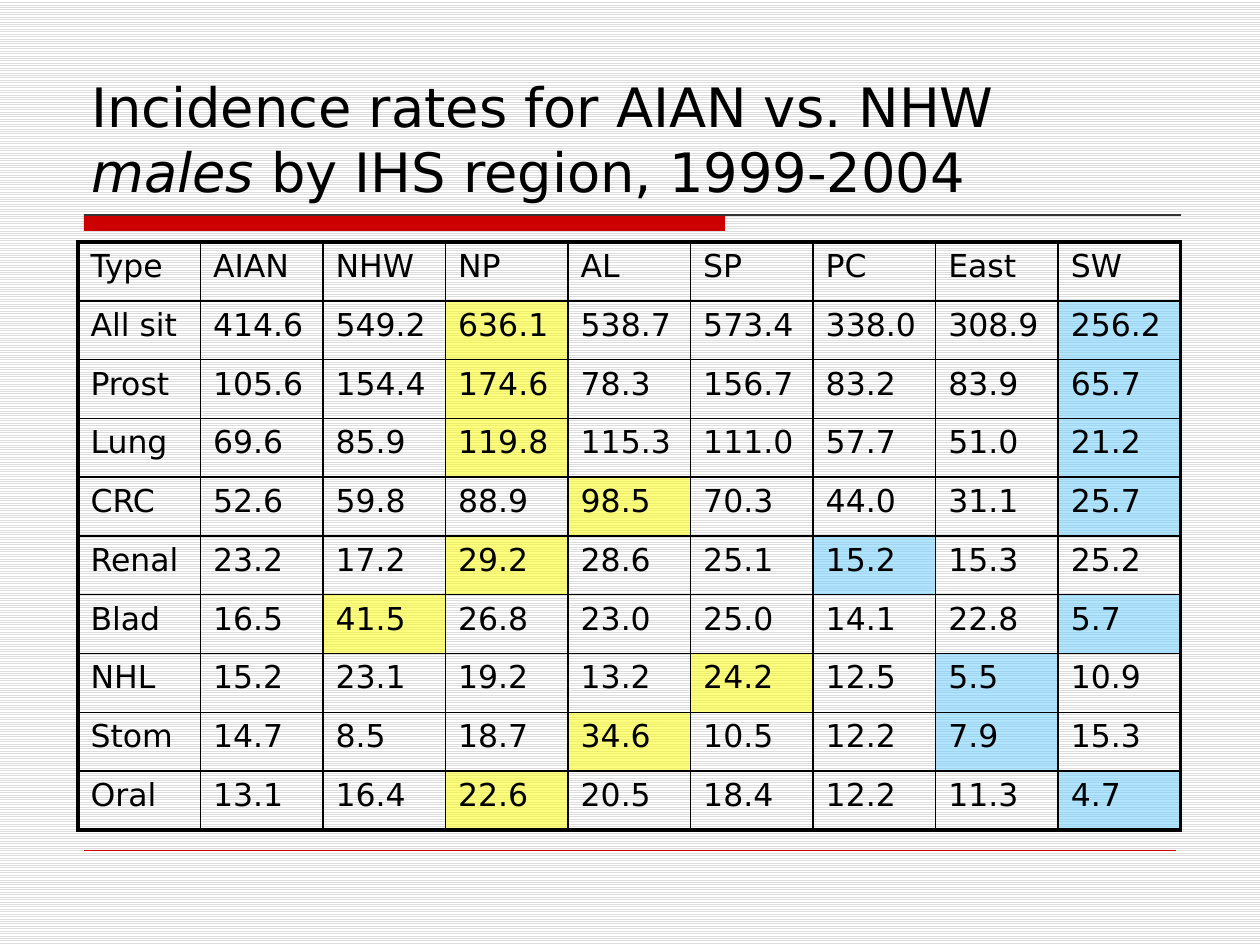
from pptx import Presentation
from pptx.dml.color import RGBColor
from pptx.enum.dml import MSO_PATTERN
from pptx.enum.shapes import MSO_CONNECTOR, MSO_SHAPE
from pptx.enum.text import MSO_ANCHOR
from pptx.oxml.ns import qn
from pptx.util import Emu, Pt
from lxml.etree import SubElement

EMU_PER_PX = 914400 / 126
FONT = "DejaVu Sans"
COLORS = {
    "text": "000000",
    "accent": "CC0000",
    "rule": "333333",
    "stripe": "DDDDDD",
    "paper": "FFFFFF",
    "highest": "FFFF00",
    "lowest": "66CCFF",
}
REGIONS = ["Type", "AIAN", "NHW", "NP", "AL", "SP", "PC", "East", "SW"]
RATES = {
    "All sit": [414.6, 549.2, 636.1, 538.7, 573.4, 338.0, 308.9, 256.2],
    "Prost": [105.6, 154.4, 174.6, 78.3, 156.7, 83.2, 83.9, 65.7],
    "Lung": [69.6, 85.9, 119.8, 115.3, 111.0, 57.7, 51.0, 21.2],
    "CRC": [52.6, 59.8, 88.9, 98.5, 70.3, 44.0, 31.1, 25.7],
    "Renal": [23.2, 17.2, 29.2, 28.6, 25.1, 15.2, 15.3, 25.2],
    "Blad": [16.5, 41.5, 26.8, 23.0, 25.0, 14.1, 22.8, 5.7],
    "NHL": [15.2, 23.1, 19.2, 13.2, 24.2, 12.5, 5.5, 10.9],
    "Stom": [14.7, 8.5, 18.7, 34.6, 10.5, 12.2, 7.9, 15.3],
    "Oral": [13.1, 16.4, 22.6, 20.5, 18.4, 12.2, 11.3, 4.7],
}


def px(length):
    return Emu(round(length * EMU_PER_PX))


def rgb(name):
    return RGBColor.from_string(COLORS[name])


class SlideBuilder:
    """Holds the slide and the style shared by its elements."""

    def __init__(self, slide):
        self.slide = slide

    def background(self):
        fill = self.slide.background.fill
        fill.patterned()
        fill.pattern = MSO_PATTERN.LIGHT_HORIZONTAL
        fill.fore_color.rgb = rgb("stripe")
        fill.back_color.rgb = rgb("paper")

    def style(self, paragraph, size):
        paragraph.font.name = FONT
        paragraph.font.size = Pt(size)
        paragraph.font.color.rgb = rgb("text")

    def bar(self, x, y, width, height, color):
        bar = self.slide.shapes.add_shape(
            MSO_SHAPE.RECTANGLE, px(x), px(y), px(width), px(height))
        bar.shadow.inherit = False
        bar.fill.solid()
        bar.fill.fore_color.rgb = rgb(color)
        bar.line.fill.background()

    def rule(self, x1, x2, y, color, weight):
        rule = self.slide.shapes.add_connector(
            MSO_CONNECTOR.STRAIGHT, px(x1), px(y), px(x2), px(y))
        rule.line.color.rgb = rgb(color)
        rule.line.width = Pt(weight)
        SubElement(rule._element.spPr, qn("a:effectLst"))

    def title(self, x, y, width, height, parts):
        """Add a title from (text, italic) parts."""
        frame = self.slide.shapes.add_textbox(
            px(x), px(y), px(width), px(height)).text_frame
        frame.word_wrap = True
        frame.vertical_anchor = MSO_ANCHOR.BOTTOM
        heading = frame.paragraphs[0]
        self.style(heading, 31)
        for text, italic in parts:
            run = heading.add_run()
            run.text = text
            run.font.italic = italic

    def border(self, cell, side, weight):
        edge = SubElement(cell._tc.get_or_add_tcPr(), qn(f"a:ln{side}"), w=str(Pt(weight)))
        paint = SubElement(edge, qn("a:solidFill"))
        SubElement(paint, qn("a:srgbClr"), val=COLORS["text"])

    def tint(self, cell, color):
        """Fill the cell half transparent, or leave it clear without a color."""
        if color is None:
            cell.fill.background()
            return
        cell.fill.solid()
        cell.fill.fore_color.rgb = rgb(color)
        swatch = cell._tc.tcPr.find(f".//{qn('a:solidFill')}[last()]/../"
                                    f"{qn('a:solidFill')}/{qn('a:srgbClr')}")
        swatch = cell._tc.tcPr.find(f"{qn('a:solidFill')}/{qn('a:srgbClr')}")
        SubElement(swatch, qn("a:alpha"), val="50000")

    def table(self, x, y, width, height, rows, tints):
        """Add a framed grid; tints holds one color name or None per cell."""
        last_row, last_col = len(rows) - 1, len(rows[0]) - 1
        table = self.slide.shapes.add_table(
            len(rows), len(rows[0]), px(x), px(y), px(width), px(height)).table
        table.first_row = table.horz_banding = False
        for column in table.columns:
            column.width = px(width / len(rows[0]))
        for row in table.rows:
            row.height = px(height / len(rows))
        for r, texts in enumerate(rows):
            for c, text in enumerate(texts):
                cell = table.cell(r, c)
                cell.text = text
                self.style(cell.text_frame.paragraphs[0], 18)
                outer = {"L": c == 0, "R": c == last_col, "T": r == 0, "B": r == last_row}
                for side, is_frame in outer.items():
                    self.border(cell, side, 2.25 if is_frame else 1)
                self.tint(cell, tints[r][c])


def extreme_tints(rates):
    marks = {max(rates): "highest", min(rates): "lowest"}
    return [None] + [marks.get(rate) for rate in rates]


def main():
    deck = Presentation()
    deck.slide_width, deck.slide_height = px(1260), px(945)
    builder = SlideBuilder(deck.slides.add_slide(deck.slide_layouts[6]))
    builder.background()
    builder.bar(84, 215, 641, 16, "accent")
    builder.rule(84, 1181, 215, "rule", 0.75)
    builder.rule(84, 1176, 850, "accent", 0.25)
    builder.title(79, 42, 1103, 168, [
        ("Incidence rates for AIAN vs. NHW ", False),
        ("males", True),
        (" by IHS region, 1999-2004", False),
    ])
    rows = [REGIONS] + [[site] + [f"{rate:.1f}" for rate in rates]
                        for site, rates in RATES.items()]
    tints = [[None] * len(REGIONS)] + [extreme_tints(rates) for rates in RATES.values()]
    builder.table(78, 242, 1103, 588, rows, tints)
    deck.save("out.pptx")


if __name__ == "__main__":
    main()
